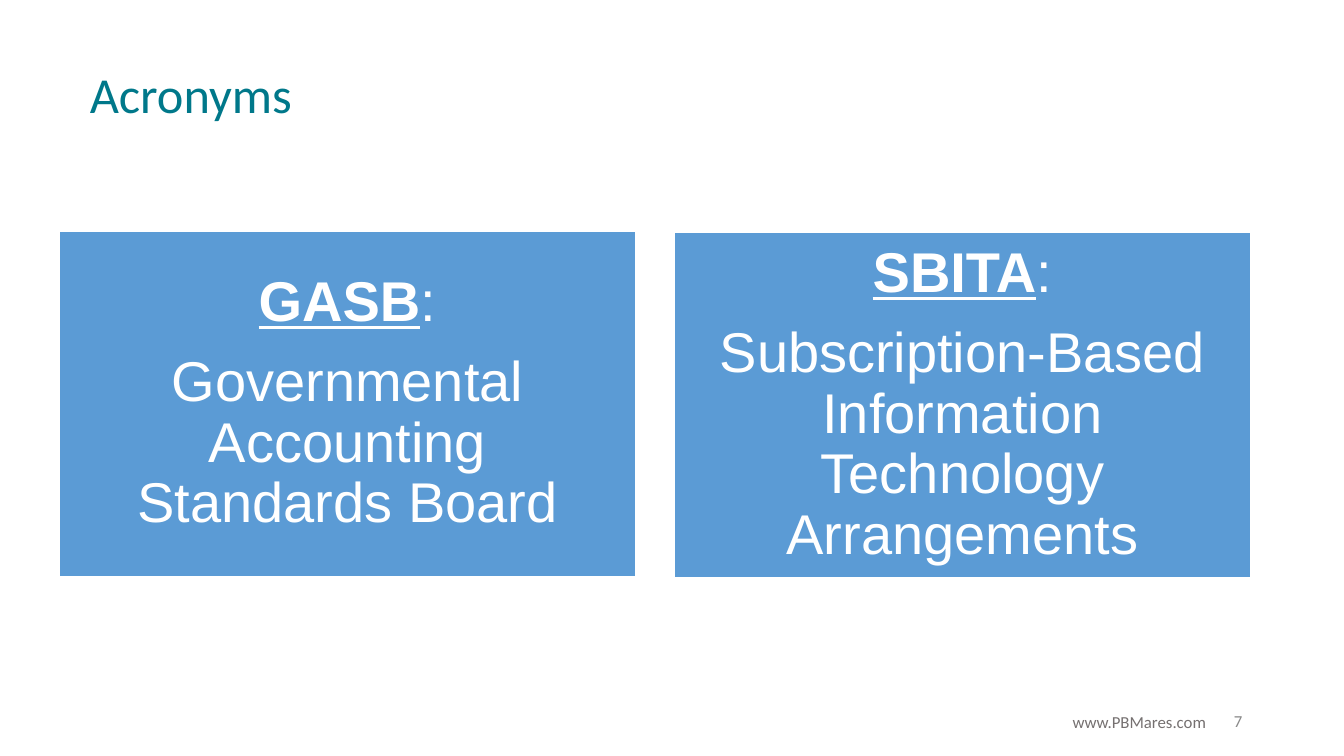
from pptx import Presentation
from pptx.dml.color import RGBColor
from pptx.enum.shapes import MSO_SHAPE
from pptx.enum.text import MSO_ANCHOR, MSO_AUTO_SIZE, PP_ALIGN
from pptx.util import Inches, Pt

RECTANGLE = MSO_SHAPE.RECTANGLE
TOP, MIDDLE = MSO_ANCHOR.TOP, MSO_ANCHOR.MIDDLE
LEFT, CENTER, RIGHT = PP_ALIGN.LEFT, PP_ALIGN.CENTER, PP_ALIGN.RIGHT
NO_AUTOFIT = MSO_AUTO_SIZE.NONE

TITLE = "Acronyms"
WEBSITE = "www.PBMares.com"
PAGE = "7"
ACRONYMS = [
    ("GASB", "Governmental Accounting Standards Board"),
    ("SBITA", "Subscription-Based Information Technology Arrangements"),
]

WIDTH, HEIGHT = 13.33, 7.5
CARD_LEFT, CARD_TOP, CARD_WIDTH, CARD_HEIGHT = 0.58, 2.29, 5.73, 3.44
CARD_STEP, CARD_DROP = 6.1, 0.01
CARD_SIZE = 40
CARD_GAP = 0.35 * CARD_SIZE


def color(value):
    return RGBColor.from_string(value)


def box(*lengths):
    return [Inches(length) for length in lengths]


def write(shape, paragraphs, size, ink, font="Calibri", align=LEFT, anchor=TOP,
          inset=(0.1, 0.05), line_spacing=None, gap=0):
    frame = shape.text_frame
    frame.word_wrap = True
    frame.auto_size = NO_AUTOFIT
    frame.vertical_anchor = anchor
    frame.margin_left = frame.margin_right = Inches(inset[0])
    frame.margin_top = frame.margin_bottom = Inches(inset[1])
    for index, runs in enumerate(paragraphs):
        paragraph = frame.add_paragraph() if index else frame.paragraphs[0]
        paragraph.alignment = align
        paragraph.space_before = Pt(0)
        paragraph.space_after = Pt(gap)
        paragraph.line_spacing = line_spacing
        for text, strong in runs:
            run = paragraph.add_run()
            run.text = text
            run.font.name = font
            run.font.size = Pt(size)
            run.font.color.rgb = color(ink)
            run.font.bold = run.font.underline = strong


presentation = Presentation()
presentation.slide_width, presentation.slide_height = box(WIDTH, HEIGHT)
slide = presentation.slides.add_slide(presentation.slide_layouts[5])
shapes = slide.shapes

title = shapes.title
title.left, title.top, title.width, title.height = box(0.79, 0.58, 9.13, 0.71)
write(title, [[(TITLE, False)]], 36, "00788A")

page = shapes.add_textbox(*box(9.42, 6.95, 3, 0.4))
write(page, [[(PAGE, False)]], 12, "888888", align=RIGHT, anchor=MIDDLE)
website = shapes.add_textbox(*box(10.54, 7.01, 2.37, 0.3))
write(website, [[(WEBSITE, False)]], 12, "757070")

for column, (acronym, meaning) in enumerate(ACRONYMS):
    card = shapes.add_shape(RECTANGLE, *box(
        CARD_LEFT + column * CARD_STEP, CARD_TOP + column * CARD_DROP,
        CARD_WIDTH, CARD_HEIGHT))
    card.shadow.inherit = False
    card.fill.solid()
    card.fill.fore_color.rgb = color("5B9BD5")
    card.line.color.rgb = color("FFFFFF")
    card.line.width = Pt(2)
    write(card, [[(acronym, True), (":", False)], [(meaning, False)]],
          CARD_SIZE, "FFFFFF", font="Arial", align=CENTER, anchor=MIDDLE,
          inset=(0.17, 0.17), line_spacing=0.9, gap=CARD_GAP)

presentation.save("out.pptx")
